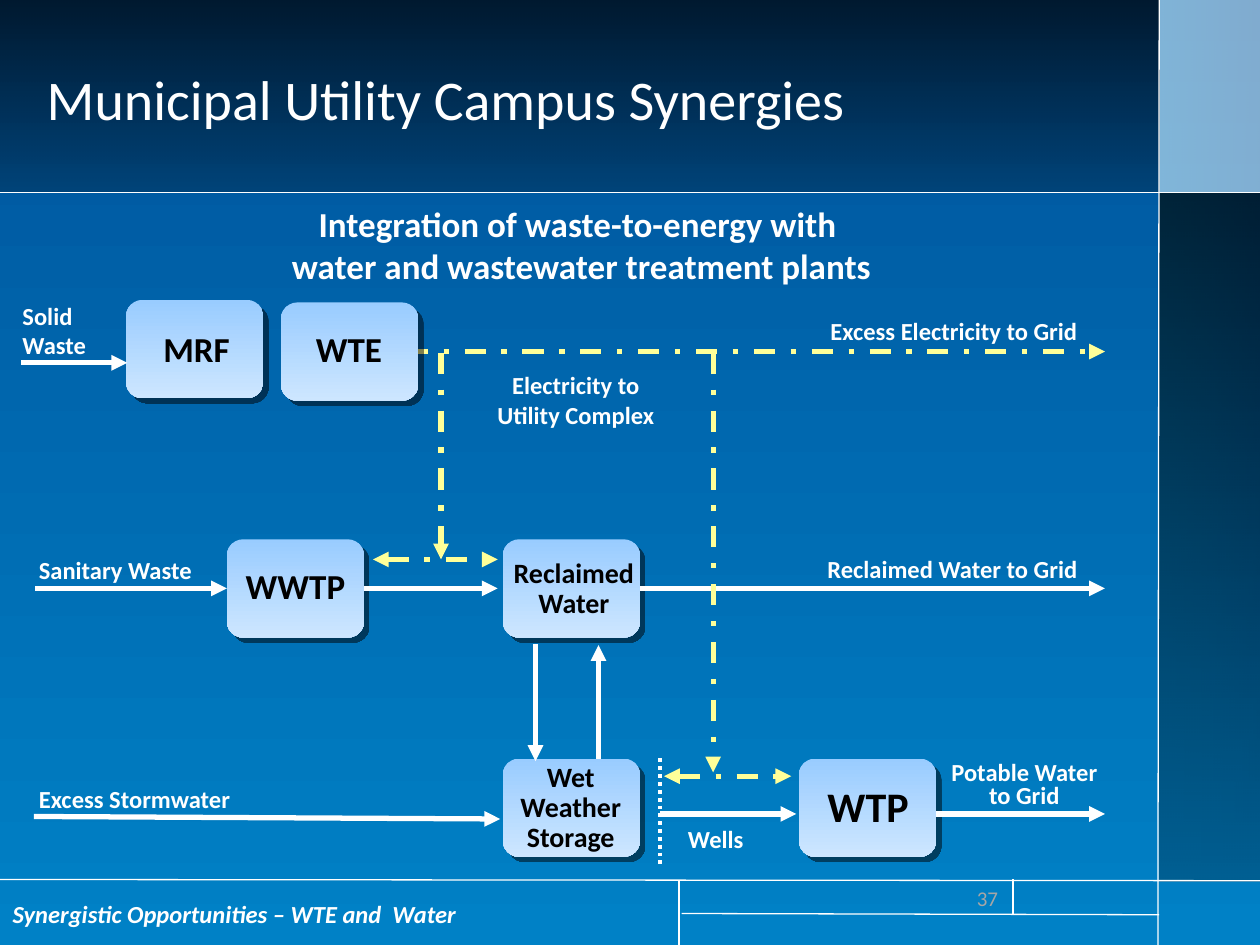
from lxml.etree import SubElement
from pptx import Presentation
from pptx.dml.color import RGBColor
from pptx.enum.dml import MSO_LINE
from pptx.enum.shapes import MSO_CONNECTOR, MSO_SHAPE
from pptx.enum.text import MSO_ANCHOR, MSO_AUTO_SIZE, PP_ALIGN
from pptx.oxml.ns import qn
from pptx.util import Inches, Pt

FONT = "Calibri"
WHITE = RGBColor(0xFF, 0xFF, 0xFF)
BLACK = RGBColor(0x00, 0x00, 0x00)
GREY = RGBColor(0xA6, 0xA6, 0xA6)
YELLOW = RGBColor(0xFF, 0xFF, 0x99)
DEEP_BLUE = RGBColor(0x00, 0x53, 0x9B)
BRIGHT_BLUE = RGBColor(0x00, 0x81, 0xC6)
BOX_TOP = RGBColor(0x99, 0xCC, 0xFF)
BOX_BOTTOM = RGBColor(0xCD, 0xE6, 0xFF)

LEFT, CENTER, RIGHT = PP_ALIGN.LEFT, PP_ALIGN.CENTER, PP_ALIGN.RIGHT
SIDE_LEFT, SIDE_RIGHT = 1, 3
SIDEBAR_X, HEADER_Y, FOOTER_Y = 9.2, 1.53, 6.98
BOX_WIDTH, BOX_HEIGHT = 1.09, 0.78


def set_opacity(shape, percents):
    colors = shape._element.spPr.iter(qn("a:srgbClr"))
    for color, percent in zip(colors, percents):
        SubElement(color, qn("a:alpha"), val=str(percent * 1000))


def add_plain_shape(slide, kind, bounds, colors, angle=270):
    """Add a borderless shape; two colours make a gradient (270 runs downwards)."""
    shape = slide.shapes.add_shape(kind, *map(Inches, bounds))
    shape.shadow.inherit = False
    shape.line.fill.background()
    if len(colors) == 1:
        shape.fill.solid()
        shape.fill.fore_color.rgb = colors[0]
    else:
        shape.fill.gradient()
        shape.fill.gradient_angle = angle
        for stop, color in zip(shape.fill.gradient_stops, colors):
            stop.color.rgb = color
    return shape


def add_panel(slide, bounds, colors, opacity=(), angle=270):
    panel = add_plain_shape(slide, MSO_SHAPE.RECTANGLE, bounds, colors, angle)
    set_opacity(panel, opacity)


def add_line(slide, start, end, color=WHITE, width=3, dash=None, ends=("tailEnd",)):
    """Add a straight line with triangular arrowheads at the named ends."""
    connector = slide.shapes.add_connector(
        MSO_CONNECTOR.STRAIGHT, *map(Inches, (*start, *end)))
    connector.line.color.rgb = color
    connector.line.width = Pt(width)
    if dash:
        connector.line.dash_style = dash
    for arrow_end in ends:
        SubElement(connector.line._get_or_add_ln(), qn(f"a:{arrow_end}"), type="triangle")
    SubElement(connector._element.spPr, qn("a:effectLst"))
    return connector


def add_power_line(slide, start, end, ends=("tailEnd",)):
    return add_line(slide, start, end, YELLOW, dash=MSO_LINE.DASH_DOT, ends=ends)


def write(frame, text, size, color=WHITE, align=LEFT, bold=True, italic=False,
          spacing=None, anchor=MSO_ANCHOR.TOP):
    frame.text = text
    frame.word_wrap = True
    frame.vertical_anchor = anchor
    for paragraph in frame.paragraphs:
        paragraph.alignment = align
        if spacing:
            paragraph.line_spacing = spacing
        for run in paragraph.runs:
            run.font.name = FONT
            run.font.size = Pt(size)
            run.font.color.rgb = color
            run.font.bold = bold
            run.font.italic = italic


def add_label(slide, text, bounds, size=14, **style):
    label = slide.shapes.add_textbox(*map(Inches, bounds))
    write(label.text_frame, text, size, **style)


def add_plant(slide, name, left, top, label_bounds, size=20):
    """Add a rounded facility box with a hard shadow and its name on top."""
    plant = add_plain_shape(slide, MSO_SHAPE.FLOWCHART_ALTERNATE_PROCESS,
                            (left, top, BOX_WIDTH, BOX_HEIGHT), (BOX_TOP, BOX_BOTTOM))
    effects = plant._element.spPr.find(qn("a:effectLst"))
    shadow = SubElement(effects, qn("a:outerShdw"), blurRad="0", dist=str(Pt(4.2)),
                        dir="2700000", algn="ctr", rotWithShape="0")
    color = SubElement(shadow, qn("a:srgbClr"), val=str(BLACK))
    SubElement(color, qn("a:alpha"), val="50000")
    add_label(slide, name, label_bounds, size, color=BLACK, align=CENTER,
              spacing=0.9, anchor=MSO_ANCHOR.MIDDLE)
    return plant


def add_backdrop(slide):
    sidebar_width = 10 - SIDEBAR_X
    lower_sidebar = (SIDEBAR_X, HEADER_Y, sidebar_width, 7 - HEADER_Y)
    tint = (BRIGHT_BLUE, BRIGHT_BLUE)
    shade = (BLACK, BLACK)
    add_panel(slide, (0, 0, 10, 7.5), (DEEP_BLUE, BRIGHT_BLUE))
    add_panel(slide, (SIDEBAR_X, 0, sidebar_width, 7), tint, (50, 10), angle=0)
    add_panel(slide, (SIDEBAR_X, 0, sidebar_width, HEADER_Y), (WHITE,), (50,))
    add_panel(slide, lower_sidebar, tint, (50, 10), angle=0)
    add_panel(slide, (0, 0, SIDEBAR_X, HEADER_Y), shade, (70, 25))
    add_panel(slide, lower_sidebar, shade, (70, 25))
    for start, end in (
        ((5.41, 7.25), (SIDEBAR_X, 7.26)),
        ((5.39, 7.5), (5.39, 6.99)),
        ((8.04, FOOTER_Y), (8.04, 7.26)),
        ((SIDEBAR_X, 0), (9.19, 7.5)),
        ((0, HEADER_Y), (10, HEADER_Y)),
        ((0, FOOTER_Y), (10, 6.99)),
    ):
        add_line(slide, start, end, width=0.75, ends=())


def place_placeholder(slide, placeholder, bounds, text, size, **style):
    """Fill a placeholder and bring it in front of the backdrop."""
    placeholder.left, placeholder.top, placeholder.width, placeholder.height = map(
        Inches, bounds)
    frame = placeholder.text_frame
    write(frame, text, size, anchor=MSO_ANCHOR.MIDDLE, **style)
    frame.auto_size = MSO_AUTO_SIZE.NONE
    properties = frame.paragraphs[0]._p.get_or_add_pPr()
    properties.set("marL", "0")
    properties.set("indent", "0")
    frame.paragraphs[0].space_before = Pt(0)
    SubElement(properties, qn("a:buNone"))
    slide.shapes._spTree.append(placeholder._element)


def add_flow_diagram(slide):
    both_ends = ("headEnd", "tailEnd")
    add_power_line(slide, (2.77, 2.79), (8.77, 2.79))
    add_line(slide, (4.75, 6.05), (4.75, 5.12))

    add_plant(slide, "MRF", 1, 2.38, (1, 2.59, 1.12, 0.4))
    add_plant(slide, "WTE", 2.23, 2.4, (2.21, 2.59, 1.12, 0.4))
    wwtp = add_plant(slide, "WWTP", 1.8, 4.28, (1.64, 4.47, 1.41, 0.4))
    reclaimed = add_plant(slide, "Reclaimed\nWater", 3.99, 4.28, (3.94, 4.38, 1.23, 0.59), 16)
    add_plant(slide, "Wet Weather\nStorage", 3.99, 6.02, (4, 6, 1.06, 0.83), 16)
    add_plant(slide, "WTP", 6.34, 6.02, (6.36, 6.19, 1.06, 0.46), 24)

    sanitary_waste = add_line(slide, (0.28, 4.67), (1.8, 4.67))
    sanitary_waste.end_connect(wwtp, SIDE_LEFT)
    treated_water = add_line(slide, (2.89, 4.67), (3.95, 4.67))
    treated_water.begin_connect(wwtp, SIDE_RIGHT)
    water_to_grid = add_line(slide, (5.08, 4.67), (8.77, 4.67))
    water_to_grid.begin_connect(reclaimed, SIDE_RIGHT)

    for start, end in (
        ((0.17, 2.88), (1.01, 2.88)),
        ((0.27, 6.48), (3.97, 6.5)),
        ((4.25, 5.11), (4.25, 6.04)),
        ((5.24, 6.46), (6.32, 6.46)),
        ((7.43, 6.46), (8.77, 6.46)),
    ):
        add_line(slide, start, end)
    add_line(slide, (5.24, 6.02), (5.24, 6.89), width=2.25,
             dash=MSO_LINE.ROUND_DOT, ends=())

    add_power_line(slide, (3.5, 2.8), (3.5, 4.44))
    add_power_line(slide, (2.96, 4.44), (3.95, 4.44), both_ends)
    add_power_line(slide, (5.66, 2.8), (5.66, 6.13))
    add_power_line(slide, (5.27, 6.16), (6.28, 6.16), both_ends)


def add_flow_labels(slide):
    for text, bounds, align in (
        ("Solid Waste", (0.08, 2.34, 0.71, 0.57), LEFT),
        ("Sanitary Waste", (0.21, 4.36, 1.58, 0.34), LEFT),
        ("Excess Stormwater", (0.21, 6.17, 1.99, 0.34), LEFT),
        ("Excess Electricity to Grid", (6.26, 2.46, 2.39, 0.34), RIGHT),
        ("Reclaimed Water to Grid", (6.26, 4.35, 2.39, 0.34), RIGHT),
        ("Electricity to\nUtility Complex", (3.78, 2.89, 1.58, 0.57), CENTER),
        ("Wells", (5.29, 6.49, 0.78, 0.34), CENTER),
    ):
        add_label(slide, text, bounds, align=align)
    add_label(slide, "Potable Water\nto Grid", (7.34, 6, 1.58, 0.48),
              align=CENTER, spacing=0.8)


def main():
    presentation = Presentation()
    presentation.slide_width, presentation.slide_height = Inches(10), Inches(7.5)
    slide = presentation.slides.add_slide(presentation.slide_layouts[1])
    title, section = slide.placeholders
    add_backdrop(slide)
    place_placeholder(slide, title, (0.27, 0, 8.9, 1.55),
                      "Municipal Utility Campus Synergies", 32, bold=False)
    add_flow_diagram(slide)
    add_flow_labels(slide)
    add_label(slide, "Integration of waste-to-energy with \vwater and wastewater treatment plants",
              (0.13, 1.56, 8.97, 0.77), 20, align=CENTER)
    add_label(slide, "37", (7.21, 7.01, 0.81, 0.23), 12, color=GREY, align=RIGHT,
              bold=False, anchor=MSO_ANCHOR.MIDDLE)
    place_placeholder(slide, section, (0, 7.01, 5.41, 0.49),
                      "Synergistic Opportunities – WTE and  Water", 14, italic=True)
    presentation.save("out.pptx")


if __name__ == "__main__":
    main()
